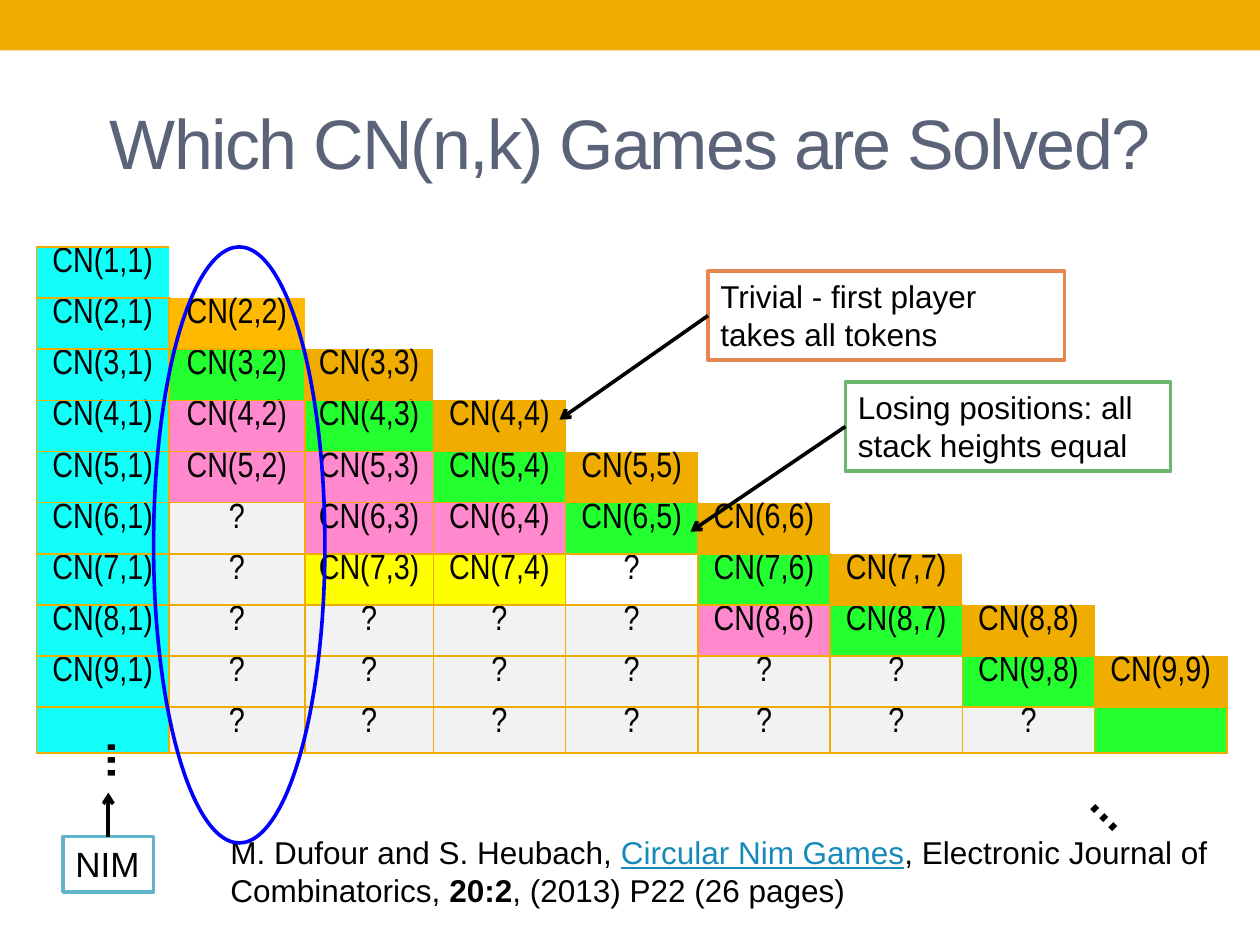
from dataclasses import dataclass
from typing import Optional

from lxml import etree
from pptx import Presentation
from pptx.dml.color import RGBColor
from pptx.enum.shapes import MSO_CONNECTOR, MSO_SHAPE
from pptx.enum.text import MSO_ANCHOR, PP_ALIGN
from pptx.oxml.ns import qn
from pptx.util import Pt

RECTANGLE = MSO_SHAPE.RECTANGLE
ELLIPSE = MSO_SHAPE.OVAL
STRAIGHT = MSO_CONNECTOR.STRAIGHT
LEFT, CENTER = PP_ALIGN.LEFT, PP_ALIGN.CENTER
TOP, MIDDLE = MSO_ANCHOR.TOP, MSO_ANCHOR.MIDDLE
TOP_SITE, LEFT_SITE = 0, 1


@dataclass(frozen=True)
class Theme:
    font: str = "Arial"
    narrow: str = "Arial Narrow"
    title_size: float = 40
    dots_size: float = 28
    label_size: float = 20
    note_size: float = 18
    outline: float = 2.08
    border: float = 1
    black: str = "000000"
    title: str = "5A6378"
    gold: str = "F0AD00"
    bright_gold: str = "FFB900"
    cyan: str = "12FFF9"
    green: str = "24FF30"
    pink: str = "FF89CC"
    yellow: str = "FFFF00"
    gray: str = "F2F2F2"
    blue: str = "0000FF"
    link: str = "168BBA"
    nim: str = "60B5CC"
    trivial: str = "E88651"
    losing: str = "6BB76D"


THEME = Theme()


@dataclass(frozen=True)
class Box:
    left: float
    top: float
    width: float
    height: float

    def lengths(self):
        return Pt(self.left), Pt(self.top), Pt(self.width), Pt(self.height)


@dataclass(frozen=True)
class Run:
    text: str
    size: float
    font: str = THEME.font
    color: str = THEME.black
    bold: bool = False
    underline: bool = False
    spacing: float = 0


@dataclass(frozen=True)
class Callout:
    box: Box
    color: str
    run: Run
    wrap: bool
    site: int
    target: tuple[float, float]


@dataclass(frozen=True)
class Dots:
    box: Box
    rotation: float


CALLOUTS = [
    Callout(Box(36, 478.1, 51.8, 31.7), THEME.nim, Run("NIM", THEME.label_size),
            False, TOP_SITE, (61.9, 452.9)),
    Callout(Box(404.6, 154.8, 203.8, 51.1), THEME.trivial,
            Run("Trivial - first player takes all tokens", THEME.note_size),
            True, LEFT_SITE, (319.7, 239.8)),
    Callout(Box(483.1, 218.2, 185.8, 51.1), THEME.losing,
            Run("Losing positions: all stack heights equal", THEME.note_size),
            True, LEFT_SITE, (394.6, 303.8)),
]
DOTS = [Dots(Box(36, 414, 37.4, 41), 270), Dots(Box(617.8, 443.5, 44.6, 41), 45)]
CITATION = [
    Run("M. Dufour and S. Heubach, ", THEME.note_size),
    Run("Circular Nim Games", THEME.note_size, color=THEME.link, underline=True),
    Run(", Electronic Journal of Combinatorics, ", THEME.note_size),
    Run("20:2", THEME.note_size, bold=True),
    Run(", (2013) P22 (26 pages)", THEME.note_size),
]
COLUMN_WIDTHS = [75.6, 77.8, 73.4] + [75.6] * 6
ROW_HEIGHTS = [29.25] * 9 + [26.3]
PINK_GAMES = {(4, 2), (5, 2), (5, 3), (6, 3), (6, 4), (8, 6)}
YELLOW_GAMES = {(7, 3), (7, 4)}
UNFILLED_GAME = (7, 5)


def rgb(color: str) -> RGBColor:
    return RGBColor.from_string(color)


def write(frame, runs: list[Run], align=LEFT) -> None:
    paragraph = frame.paragraphs[0]
    paragraph.alignment = align
    for item in runs:
        run = paragraph.add_run()
        run.text = item.text
        font = run.font
        font.name, font.size = item.font, Pt(item.size)
        font.bold, font.underline = item.bold, item.underline
        font.color.rgb = rgb(item.color)
        if item.spacing:
            font._element.set("spc", str(int(item.spacing * 100)))


def add_text(slide, box: Box, runs: list[Run], align=LEFT, anchor=TOP, wrap=True):
    shape = slide.shapes.add_textbox(*box.lengths())
    shape.text_frame.word_wrap = wrap
    shape.text_frame.vertical_anchor = anchor
    write(shape.text_frame, runs, align)
    return shape


def add_outline(slide, kind, box: Box, line: Optional[str], fill: Optional[str] = None):
    shape = slide.shapes.add_shape(kind, *box.lengths())
    shape.shadow.inherit = False
    if fill:
        shape.fill.solid()
        shape.fill.fore_color.rgb = rgb(fill)
    else:
        shape.fill.background()
    if line:
        shape.line.color.rgb = rgb(line)
        shape.line.width = Pt(THEME.outline)
    else:
        shape.line.fill.background()
    return shape


def add_callout(slide, callout: Callout) -> None:
    shape = add_outline(slide, RECTANGLE, callout.box, callout.color)
    shape.text_frame.word_wrap = callout.wrap
    shape.text_frame.vertical_anchor = TOP
    write(shape.text_frame, [callout.run])
    end_x, end_y = callout.target
    arrow = slide.shapes.add_connector(STRAIGHT, 0, 0, Pt(end_x), Pt(end_y))
    arrow.begin_connect(shape, callout.site)
    arrow.line.color.rgb = rgb(THEME.black)
    arrow.line.width = Pt(THEME.outline)
    etree.SubElement(arrow.line._get_or_add_ln(), qn("a:tailEnd"), type="arrow")
    etree.SubElement(arrow._element.spPr, qn("a:effectLst"))


def set_borders(cell, edges: str) -> None:
    properties = cell._tc.get_or_add_tcPr()
    for edge in "LRTB":
        line = etree.SubElement(properties, qn(f"a:ln{edge}"), w=str(int(Pt(THEME.border))))
        if edge in edges:
            fill = etree.SubElement(line, qn("a:solidFill"))
            etree.SubElement(fill, qn("a:srgbClr"), val=THEME.gold)
        else:
            etree.SubElement(line, qn("a:noFill"))


def game_style(n: int, k: int) -> tuple[str, Optional[str]]:
    name = f"CN({n},{k})" if n < 10 else ""
    if k == 1:
        return name, THEME.cyan
    if n == k:
        return name, THEME.bright_gold if n == 2 else THEME.gold
    if n == k + 1:
        return name, THEME.green
    if (n, k) in PINK_GAMES:
        return name, THEME.pink
    if (n, k) in YELLOW_GAMES:
        return name, THEME.yellow
    return "?", None if (n, k) == UNFILLED_GAME else THEME.gray


def game_edges(n: int, k: int) -> str:
    if k > n:
        return ""
    if k < n:
        return "LRTB"
    return {1: "LTB", 9: "LRB"}.get(n, "LB")


def add_games(slide) -> None:
    box = Box(20.9, 141.1, sum(COLUMN_WIDTHS), sum(ROW_HEIGHTS))
    table = slide.shapes.add_table(len(ROW_HEIGHTS), len(COLUMN_WIDTHS), *box.lengths()).table
    table.first_row = table.horz_banding = False
    for column, width in zip(table.columns, COLUMN_WIDTHS):
        column.width = Pt(width)
    for n, (row, height) in enumerate(zip(table.rows, ROW_HEIGHTS), 1):
        row.height = Pt(height)
        for k, cell in enumerate(row.cells, 1):
            cell.margin_top = cell.margin_bottom = Pt(0)
            set_borders(cell, game_edges(n, k))
            text, fill = game_style(n, k) if k <= n else ("", None)
            if fill:
                cell.fill.solid()
                cell.fill.fore_color.rgb = rgb(fill)
            else:
                cell.fill.background()
            if text:
                write(cell.text_frame, [Run(text, THEME.label_size, THEME.narrow)], CENTER)


def main() -> None:
    presentation = Presentation()
    presentation.slide_width, presentation.slide_height = Pt(720), Pt(540)
    slide = presentation.slides.add_slide(presentation.slide_layouts[6])
    add_outline(slide, RECTANGLE, Box(0, 0, 720, 28.8), None, THEME.gold)
    title = Run("Which CN(n,k) Games are Solved?", THEME.title_size, color=THEME.title, spacing=-1)
    add_text(slide, Box(36, 41.8, 648, 77.8), [title], CENTER, MIDDLE)
    add_games(slide)
    for dots in DOTS:
        run = Run("…", THEME.dots_size, THEME.narrow, bold=True)
        add_text(slide, dots.box, [run], wrap=False).rotation = dots.rotation
    for callout in CALLOUTS:
        add_callout(slide, callout)
    add_text(slide, Box(124.6, 472.3, 576.7, 51.1), CITATION)
    add_outline(slide, ELLIPSE, Box(87.8, 141.1, 97.9, 340.6), THEME.blue)
    presentation.save("out.pptx")


if __name__ == "__main__":
    main()
